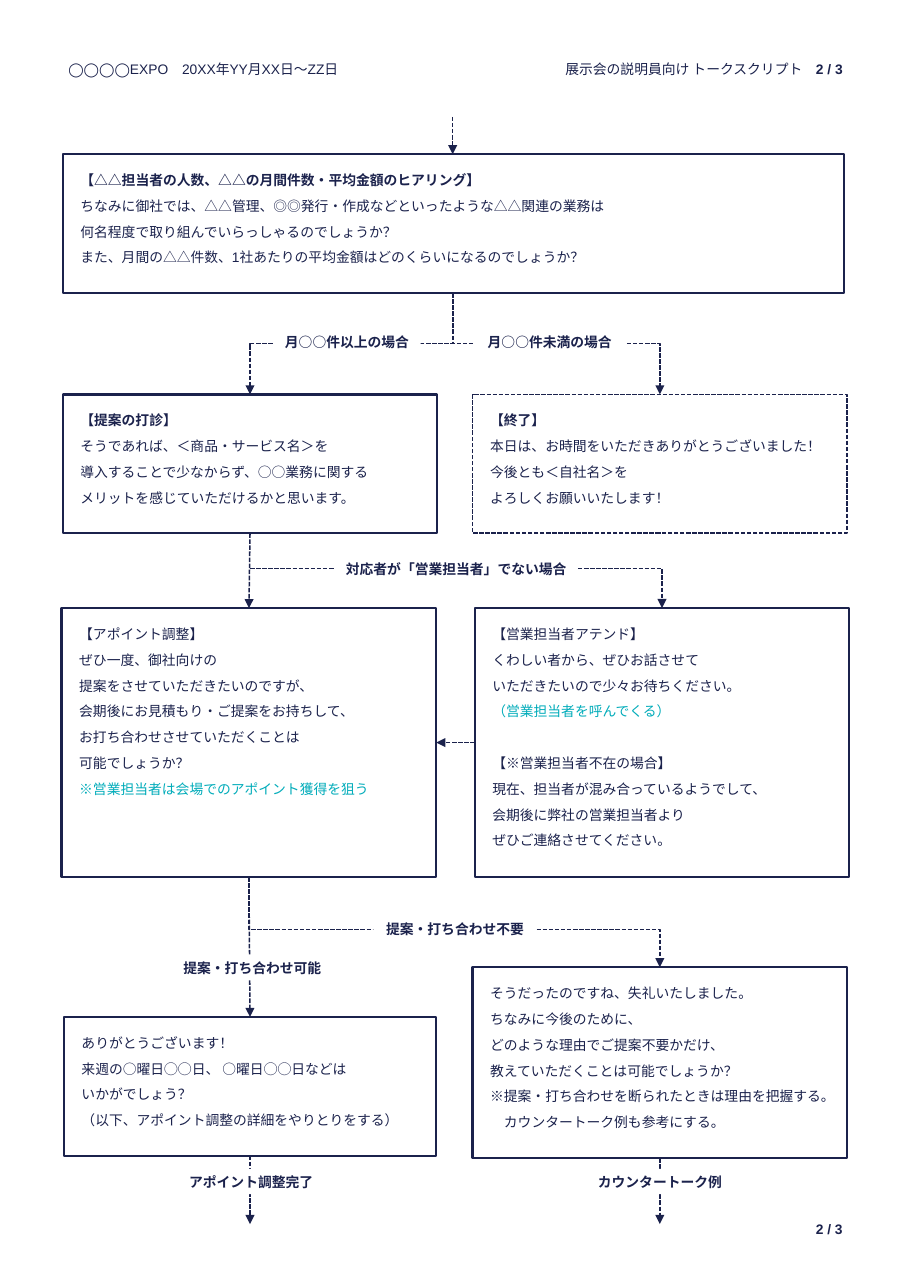
from dataclasses import dataclass

from lxml import etree
from pptx import Presentation
from pptx.dml.color import RGBColor
from pptx.enum.dml import MSO_LINE
from pptx.enum.shapes import MSO_CONNECTOR, MSO_SHAPE
from pptx.enum.text import MSO_ANCHOR, MSO_AUTO_SIZE, PP_ALIGN
from pptx.oxml.ns import qn
from pptx.util import Inches, Pt

RECT = MSO_SHAPE.RECTANGLE
ELBOW, STRAIGHT = MSO_CONNECTOR.ELBOW, MSO_CONNECTOR.STRAIGHT
DASH = MSO_LINE.SQUARE_DOT
LEFT, MID, RIGHT = PP_ALIGN.LEFT, PP_ALIGN.CENTER, PP_ALIGN.RIGHT
TOP, CENTER = MSO_ANCHOR.TOP, MSO_ANCHOR.MIDDLE
FIXED = MSO_AUTO_SIZE.NONE
COLORS = {"navy": "1B224C", "teal": "00ACBA", "white": "FFFFFF"}
PAGE = "2 / 3"
LEFT_X, RIGHT_X, MID_X = 2.27, 5.99, 4.11


@dataclass
class Line:
    text: str
    bold: bool = False
    color: str = "navy"
    before: float = 3
    indent: float = 0


@dataclass
class Box:
    at: tuple[float, float, float, float]
    lines: list[Line]
    dashed: bool = False


@dataclass
class Link:
    start: tuple[float, float]
    end: tuple[float, float]
    bend: float = 0  # share of the drop before the turn; 1 is a single corner


@dataclass
class Label:
    mid: float
    top: float
    width: float
    text: str


def plain(*texts: str) -> list[Line]:
    return [Line(text) for text in texts]


def head(title: str, *texts: str) -> list[Line]:
    return [Line(title, bold=True), *plain(*texts)]


BOXES = [
    Box((0.57, 1.4, 7.09, 1.26), head(
        "【△△担当者の人数、△△の月間件数・平均金額のヒアリング】",
        "ちなみに御社では、△△管理、◎◎発行・作成などといったような△△関連の業務は",
        "何名程度で取り組んでいらっしゃるのでしょうか？",
        "また、月間の△△件数、1社あたりの平均金額はどのくらいになるのでしょうか？")),
    Box((0.57, 3.58, 3.4, 1.26), head(
        "【提案の打診】",
        "そうであれば、＜商品・サービス名＞を",
        "導入することで少なからず、○○業務に関する",
        "メリットを感じていただけるかと思います。")),
    Box((4.29, 3.58, 3.4, 1.26), head(
        "【終了】",
        "本日は、お時間をいただきありがとうございました！",
        "今後とも＜自社名＞を",
        "よろしくお願いいたします！"), dashed=True),
    Box((0.56, 5.52, 3.4, 2.44), plain(
        "【アポイント調整】",
        "ぜひ一度、御社向けの",
        "提案をさせていただきたいのですが、",
        "会期後にお見積もり・ご提案をお持ちして、",
        "お打ち合わせさせていただくことは",
        "可能でしょうか？")
        + [Line("※営業担当者は会場でのアポイント獲得を狙う", color="teal")]),
    Box((4.31, 5.52, 3.4, 2.44), plain(
        "【営業担当者アテンド】",
        "くわしい者から、ぜひお話させて",
        "いただきたいので少々お待ちください。")
        + [Line("（営業担当者を呼んでくる）", color="teal"),
           Line("【※営業担当者不在の場合】", before=20)]
        + plain("現在、担当者が混み合っているようでして、",
                "会期後に弊社の営業担当者より",
                "ぜひご連絡させてください。")),
    Box((0.58, 9.23, 3.38, 1.26), plain(
        "ありがとうございます！",
        "来週の○曜日◯◯日、 ○曜日◯◯日などは",
        "いかがでしょう？",
        "（以下、アポイント調整の詳細をやりとりをする）")),
    Box((4.29, 8.78, 3.4, 1.73), plain(
        "そうだったのですね、失礼いたしました。",
        "ちなみに今後のために、",
        "どのような理由でご提案不要かだけ、",
        "教えていただくことは可能でしょうか？",
        "※提案・打ち合わせを断られたときは理由を把握する。")
        + [Line("カウンタートーク例も参考にする。", indent=9)]),
]
LINKS = [
    Link((MID_X, 1.06), (MID_X, 1.4)),
    Link((MID_X, 2.66), (LEFT_X, 3.58), 0.5),
    Link((MID_X, 2.66), (RIGHT_X, 3.58), 0.5),
    Link((LEFT_X, 5.16), (6.01, 5.52), 1),
    Link((LEFT_X, 4.84), (2.26, 5.52)),
    Link((4.31, 6.74), (3.96, 6.74)),
    Link((2.26, 7.96), (RIGHT_X, 8.78), 0.58),
    Link((2.26, 7.96), (LEFT_X, 9.23)),
    Link((LEFT_X, 10.49), (LEFT_X, 11.11)),
    Link((RIGHT_X, 10.51), (RIGHT_X, 11.11)),
]
LABELS = [
    Label(3.15, 2.99, 1.34, "月○○件以上の場合"),
    Label(4.99, 2.99, 1.38, "月○○件未満の場合"),
    Label(4.14, 5.05, 2.21, "対応者が「営業担当者」でない場合"),
    Label(4.13, 8.32, 1.48, "提案・打ち合わせ不要"),
    Label(2.29, 8.67, 1.48, "提案・打ち合わせ可能"),
    Label(2.28, 10.61, 1.4, "アポイント調整完了"),
    Label(RIGHT_X, 10.61, 1.35, "カウンタートーク例"),
]


def paint(name: str) -> RGBColor:
    return RGBColor.from_string(COLORS[name])


def setup(frame, inset: float, anchor=TOP) -> None:
    pad = Inches(inset)
    form = {"margin_left": pad, "margin_right": pad, "margin_top": pad,
            "margin_bottom": pad, "word_wrap": True,
            "auto_size": FIXED, "vertical_anchor": anchor}
    for key, val in form.items():
        setattr(frame, key, val)


def write(para, line: Line, align=LEFT) -> None:
    para.alignment = align
    run = para.add_run()
    run.text = line.text
    form = {"name": "Arial", "size": Pt(9), "bold": line.bold}
    for key, val in form.items():
        setattr(run.font, key, val)
    run.font.color.rgb = paint(line.color)


def add_rect(shapes, at: tuple):
    rect = shapes.add_shape(RECT, *map(Inches, at))
    rect.shadow.inherit = False
    rect.fill.solid()
    rect.fill.fore_color.rgb = paint("white")
    return rect


def draw_box(shapes, box: Box) -> None:
    rect = add_rect(shapes, box.at)
    rect.line.color.rgb = paint("navy")
    rect.line.width = Pt(1 if box.dashed else 1.5)
    if box.dashed:
        rect.line.dash_style = DASH
    frame = rect.text_frame
    setup(frame, 0.16)
    for num, line in enumerate(box.lines):
        para = frame.add_paragraph() if num else frame.paragraphs[0]
        para.space_before = Pt(line.before if num else 0)
        para.space_after = Pt(3)
        if line.indent:
            para._p.get_or_add_pPr().set("marL", str(Pt(line.indent)))
        write(para, line)


def draw_link(shapes, link: Link) -> None:
    (x1, y1), (x2, y2) = link.start, link.end
    turned = 0 < link.bend < 1
    if turned:  # a drop-first elbow is a sideways one turned by a quarter
        cx, cy, dx, dy = (x1 + x2) / 2, (y1 + y2) / 2, abs(x2 - x1) / 2, (y2 - y1) / 2
        x1, x2, y1, y2 = cx - dy, cx + dy, cy - dx, cy + dx
    wire = shapes.add_connector(ELBOW if link.bend else STRAIGHT,
                                *map(Inches, (x1, y1, x2, y2)))
    props = wire._element.spPr
    geom = props.find(qn("a:prstGeom"))
    if turned:
        right = link.end[0] > link.start[0]
        frame = props.find(qn("a:xfrm"))
        frame.set("rot", str((270 if right else 90) * 60000))
        if right:
            frame.set("flipH", "1")
        etree.SubElement(geom.find(qn("a:avLst")), qn("a:gd"),
                         name="adj1", fmla=f"val {round(link.bend * 100000)}")
    elif link.bend:
        geom.set("prst", "bentConnector2")
    wire.line.color.rgb = paint("navy")
    wire.line.width = Pt(1)
    wire.line.dash_style = DASH
    etree.SubElement(props.find(qn("a:ln")), qn("a:tailEnd"), type="triangle")
    etree.SubElement(props, qn("a:effectLst"))


def draw_label(shapes, label: Label) -> None:
    rect = add_rect(shapes, (label.mid - label.width / 2, label.top, label.width, 0.23))
    rect.line.fill.background()
    setup(rect.text_frame, 0.04)
    write(rect.text_frame.paragraphs[0], Line(label.text, bold=True), MID)


def main() -> None:
    deck = Presentation()
    deck.slide_width, deck.slide_height = Inches(8.27), Inches(11.69)
    slide = deck.slides.add_slide(deck.slide_layouts[5])
    shapes = slide.shapes

    # Header and page number
    title = shapes.title
    spot = {"left": 4.5, "top": 0.51, "width": 3.19, "height": 0.24}
    for key, val in spot.items():
        setattr(title, key, Inches(val))
    setup(title.text_frame, 0.04)
    para = title.text_frame.paragraphs[0]
    write(para, Line("展示会の説明員向け トークスクリプト　"), RIGHT)
    write(para, Line(PAGE, bold=True), RIGHT)
    date = shapes.add_textbox(*map(Inches, (0.58, 0.51, 3.19, 0.24))).text_frame
    setup(date, 0.04, CENTER)
    write(date.paragraphs[0], Line("◯◯◯◯EXPO　20XX年YY月XX日〜ZZ日"))
    foot = shapes.add_textbox(*map(Inches, (6.75, 11.04, 0.94, 0.24))).text_frame
    setup(foot, 0.04)
    write(foot.paragraphs[0], Line(PAGE, bold=True), RIGHT)

    # Flow: boxes, then arrows, then labels over the arrows
    for box in BOXES:
        draw_box(shapes, box)
    for link in LINKS:
        draw_link(shapes, link)
    for label in LABELS:
        draw_label(shapes, label)
    deck.save("out.pptx")


if __name__ == "__main__":
    main()
